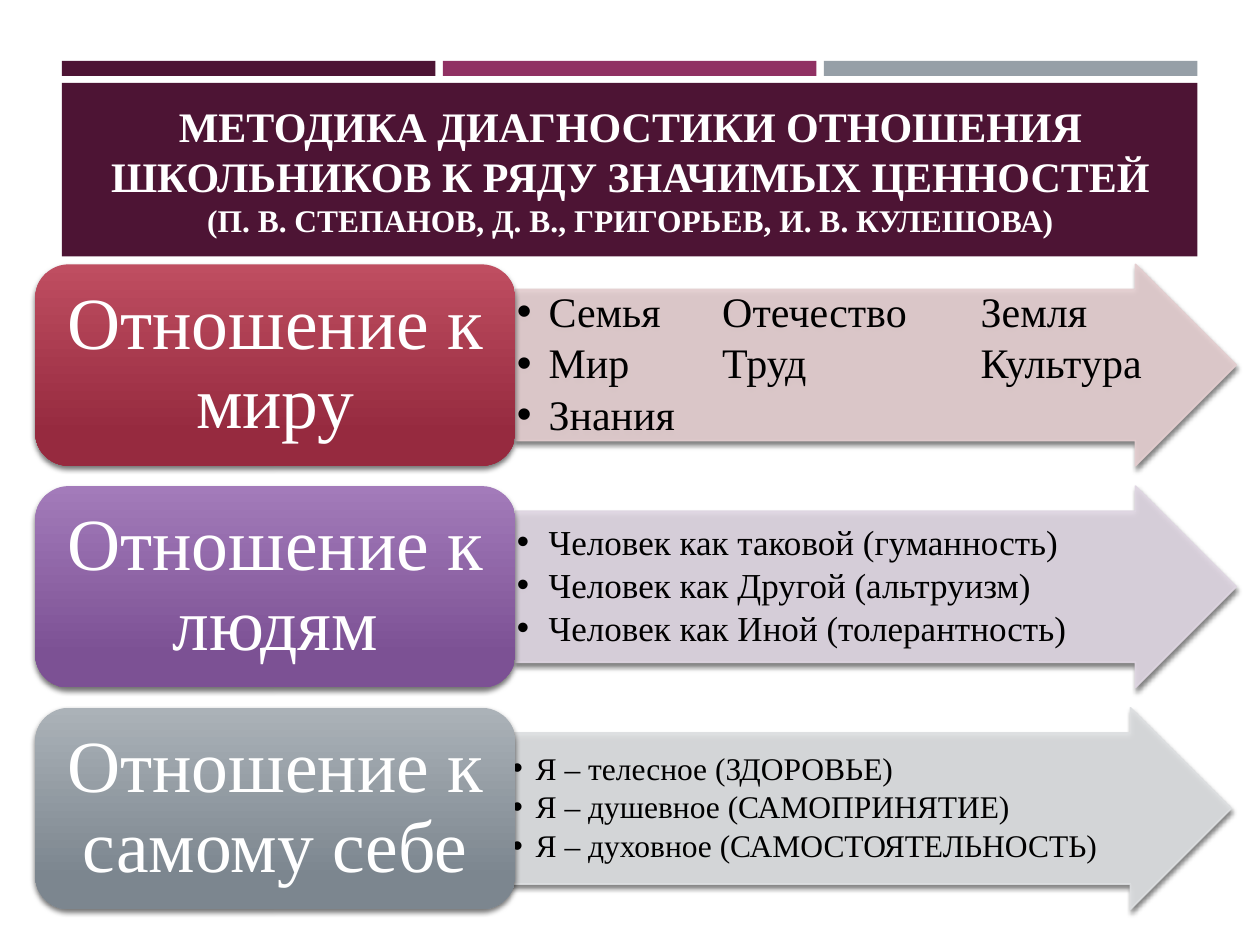
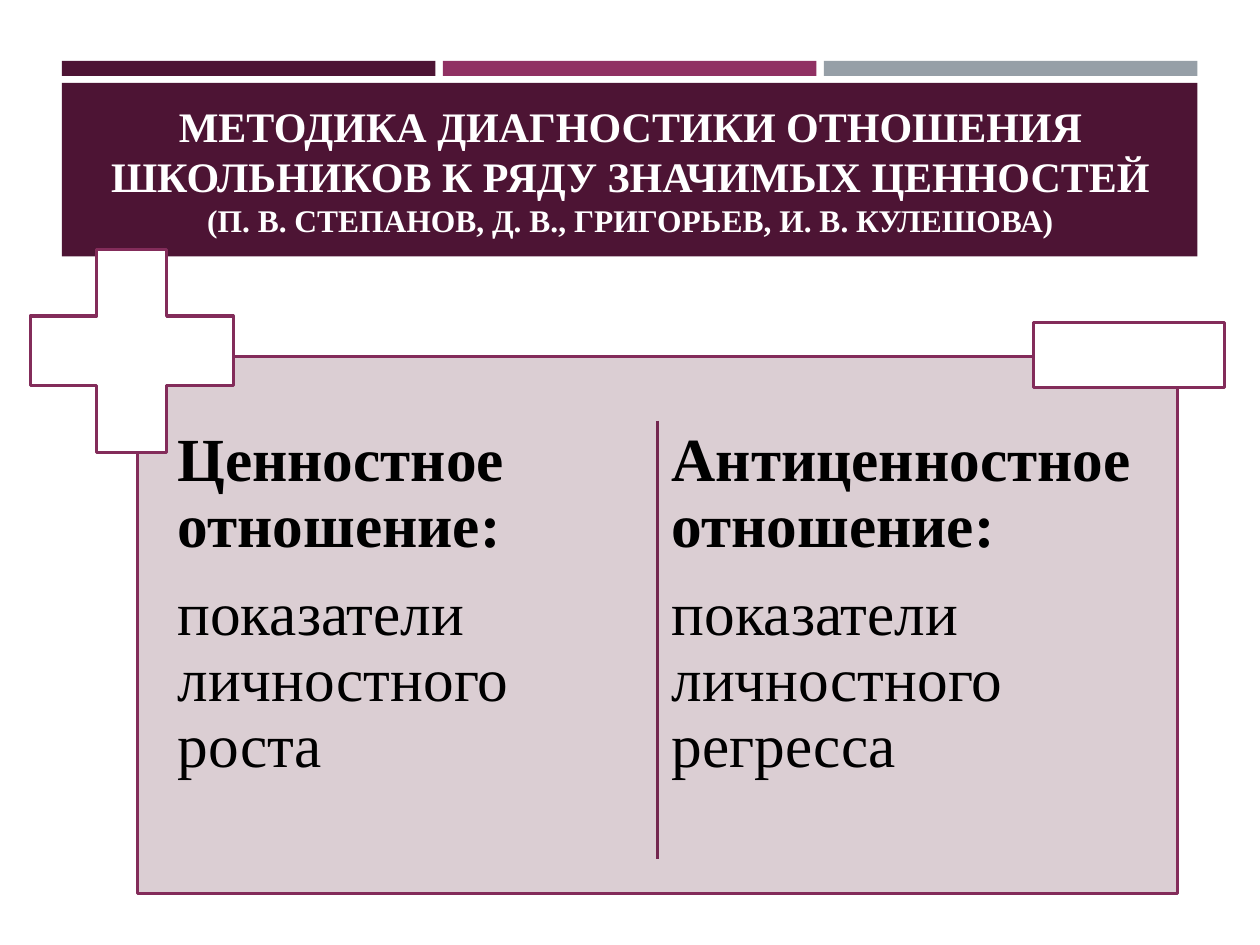
from dataclasses import dataclass
from typing import Optional

from lxml.etree import SubElement
from pptx import Presentation
from pptx.dml.color import RGBColor
from pptx.enum.shapes import MSO_CONNECTOR as Connector, MSO_SHAPE as Preset
from pptx.enum.text import MSO_ANCHOR as Anchor, MSO_AUTO_SIZE as AutoSize, PP_ALIGN as Align
from pptx.oxml.ns import qn
from pptx.util import Cm, Pt

FONT = "Times New Roman"
BULLET_FONT = "Arial"
WHITE = RGBColor(0xFF, 0xFF, 0xFF)
BLACK = RGBColor(0x00, 0x00, 0x00)
PLUM = RGBColor(0x4D, 0x14, 0x34)
MAGENTA = RGBColor(0x90, 0x31, 0x63)
GREY = RGBColor(0x96, 0x9F, 0xA7)
PANEL = RGBColor(0xDB, 0xCE, 0xD3)
OUTLINE = RGBColor(0x83, 0x2C, 0x5A)
DIVIDER = RGBColor(0x73, 0x27, 0x4F)
ROSE_PALE = RGBColor(0xE4, 0xCE, 0xD0)
ROSE_LIGHT = RGBColor(0xBF, 0x4E, 0x61)
ROSE_DARK = RGBColor(0x96, 0x2A, 0x3F)
VIOLET_PALE = RGBColor(0xDF, 0xD6, 0xE2)
VIOLET_LIGHT = RGBColor(0xA3, 0x7B, 0xBA)
VIOLET_DARK = RGBColor(0x7C, 0x51, 0x94)
GREY_PALE = RGBColor(0xDD, 0xDF, 0xE1)
GREY_LIGHT = RGBColor(0xAB, 0xB2, 0xB8)
GREY_DARK = RGBColor(0x7C, 0x86, 0x8F)

BAND_LEFT = 1.25
BAR_STEP = 7.68
ROW_TOP = 5.33
ROW_STEP = 4.47
ROW_HEIGHT = 4.06
COLUMN_STOPS = (4.14, 9.35)
TITLE = "МЕТОДИКА ДИАГНОСТИКИ ОТНОШЕНИЯ ШКОЛЬНИКОВ К РЯДУ ЗНАЧИМЫХ ЦЕННОСТЕЙ"
AUTHORS = "(П. В. СТЕПАНОВ, Д. В., ГРИГОРЬЕВ, И. В. КУЛЕШОВА)"


@dataclass(frozen=True)
class Box:
    left: float
    top: float
    width: float
    height: float

    def lengths(self) -> tuple:
        return Cm(self.left), Cm(self.top), Cm(self.width), Cm(self.height)


@dataclass(frozen=True)
class Attitude:
    heading: str
    values: tuple
    size: int
    indent: float
    arrow_left: float
    pale: RGBColor
    light: RGBColor
    dark: RGBColor


@dataclass(frozen=True)
class Column:
    left: float
    heading: str
    body: str


ATTITUDES = (
    Attitude("Отношение к миру",
             ("Семья\tОтечество\tЗемля", "Мир\tТруд\tКультура", "Знания"),
             24, 0.64, 10.39, ROSE_PALE, ROSE_LIGHT, ROSE_DARK),
    Attitude("Отношение к людям",
             ("Человек как таковой (гуманность)", "Человек как Другой (альтруизм)",
              "Человек как Иной (толерантность)"),
             20, 0.64, 10.39, VIOLET_PALE, VIOLET_LIGHT, VIOLET_DARK),
    Attitude("Отношение к самому себе",
             ("Я – телесное (ЗДОРОВЬЕ)", "Я – душевное (САМОПРИНЯТИЕ)",
              "Я – духовное (САМОСТОЯТЕЛЬНОСТЬ)"),
             18, 0.48, 10.29, GREY_PALE, GREY_LIGHT, GREY_DARK),
)
COLUMNS = (
    Column(3.4, "Ценностное отношение:", "показатели личностного роста"),
    Column(13.36, "Антиценностное отношение:", "показатели личностного регресса"),
)


def add_run(paragraph, text: str, size: float, color: RGBColor, bold: bool = False) -> None:
    run = paragraph.add_run()
    run.text = text
    run.font.name = FONT
    run.font.size = Pt(size)
    run.font.bold = bold
    run.font.color.rgb = color


def next_paragraph(frame, index: int):
    return frame.paragraphs[0] if index == 0 else frame.add_paragraph()


def space(paragraph, after: float) -> None:
    paragraph.line_spacing = 0.9
    paragraph.space_after = Pt(after)


def set_margins(frame, horizontal: float, vertical: float) -> None:
    frame.word_wrap = True
    frame.margin_left = frame.margin_right = Cm(horizontal)
    frame.margin_top = frame.margin_bottom = Cm(vertical)


def add_shape(slide, preset: Preset, box: Box, fill: Optional[RGBColor] = None,
              line: Optional[RGBColor] = None, weight: float = 1.75):
    shape = slide.shapes.add_shape(preset, *box.lengths())
    shape.shadow.inherit = False
    if fill is not None:
        shape.fill.solid()
        shape.fill.fore_color.rgb = fill
    if line is None:
        shape.line.fill.background()
    else:
        shape.line.color.rgb = line
        shape.line.width = Pt(weight)
    return shape


def set_alpha(color, percent: int) -> None:
    SubElement(color, qn("a:alpha"), val=str(percent * 1000))


def add_shadow(shape) -> None:
    effects = shape.element.spPr.find(qn("a:effectLst"))
    shadow = SubElement(effects, qn("a:outerShdw"), blurRad=str(Pt(3)), dist=str(Pt(2)),
                        dir="5400000", rotWithShape="0")
    set_alpha(SubElement(shadow, qn("a:srgbClr"), val=str(BLACK)), 55)


def add_bullet(paragraph, indent: float, stops: tuple) -> None:
    properties = paragraph._p.get_or_add_pPr()
    properties.set("marL", str(Cm(indent)))
    properties.set("indent", str(-Cm(indent)))
    SubElement(properties, qn("a:buFont"), typeface=BULLET_FONT)
    SubElement(properties, qn("a:buChar"), char="•")
    tabs = SubElement(properties, qn("a:tabLst"))
    for stop in stops:
        SubElement(tabs, qn("a:tab"), pos=str(Cm(stop)), algn="l")


def add_titled_slide(presentation):
    slide = presentation.slides.add_slide(presentation.slide_layouts[5])
    for index, color in enumerate((PLUM, MAGENTA, GREY)):
        add_shape(slide, Preset.RECTANGLE,
                  Box(BAND_LEFT + index * BAR_STEP, 1.23, 7.53, 0.3), color)
    add_shape(slide, Preset.RECTANGLE, Box(BAND_LEFT, 1.67, 22.89, 3.5), PLUM)

    title = slide.shapes.title
    title.left, title.top, title.width, title.height = Box(1.61, 1.9, 22.2, 3.04).lengths()
    frame = title.text_frame
    frame.word_wrap = True
    frame.auto_size = AutoSize.NONE
    frame.vertical_anchor = Anchor.MIDDLE
    for index, (text, size) in enumerate(((TITLE, 24), (AUTHORS, 18))):
        paragraph = next_paragraph(frame, index)
        paragraph.alignment = Align.CENTER
        add_run(paragraph, text, size, WHITE, True)
    title.element.getparent().append(title.element)
    return slide


def add_arrow(slide, attitude: Attitude, top: float) -> None:
    arrow = add_shape(slide, Preset.RIGHT_ARROW,
                      Box(attitude.arrow_left, top, 14.53, ROW_HEIGHT),
                      attitude.pale, attitude.pale, 1)
    arrow.adjustments[0], arrow.adjustments[1] = 0.75, 0.5
    for color in arrow.element.spPr.iter(qn("a:srgbClr")):
        set_alpha(color, 90)
    add_shadow(arrow)
    frame = arrow.text_frame
    set_margins(frame, 0.03, 0.03)
    frame.vertical_anchor = Anchor.MIDDLE
    for index, value in enumerate(attitude.values):
        paragraph = next_paragraph(frame, index)
        paragraph.alignment = Align.LEFT
        space(paragraph, attitude.size * 0.15)
        add_bullet(paragraph, attitude.indent, COLUMN_STOPS if "\t" in value else ())
        add_run(paragraph, value, attitude.size, BLACK)


def add_heading_box(slide, attitude: Attitude, top: float) -> None:
    box = add_shape(slide, Preset.ROUNDED_RECTANGLE, Box(0.71, top, 9.68, ROW_HEIGHT))
    box.fill.gradient()
    box.fill.gradient_angle = 270
    stops = ((0, attitude.light), (0.84, attitude.dark))
    for stop, (position, color) in zip(box.fill.gradient_stops, stops):
        stop.position = position
        stop.color.rgb = color
    add_shadow(box)
    frame = box.text_frame
    set_margins(frame, 0.43, 0.23)
    frame.vertical_anchor = Anchor.MIDDLE
    paragraph = frame.paragraphs[0]
    paragraph.alignment = Align.CENTER
    space(paragraph, 14.7)
    add_run(paragraph, attitude.heading, 42, WHITE)


def add_column(slide, column: Column) -> None:
    frame = slide.shapes.add_textbox(*Box(column.left, 8.46, 9.73, 9.27).lengths()).text_frame
    set_margins(frame, 0.18, 0.18)
    for index, (text, bold) in enumerate(((column.heading, True), (column.body, False))):
        paragraph = next_paragraph(frame, index)
        space(paragraph, 12.25)
        add_run(paragraph, text, 35, BLACK, bold)


def build_attitudes(presentation) -> None:
    slide = add_titled_slide(presentation)
    for index, attitude in enumerate(ATTITUDES):
        top = ROW_TOP + index * ROW_STEP
        add_arrow(slide, attitude, top)
        add_heading_box(slide, attitude, top)


def build_comparison(presentation) -> None:
    slide = add_titled_slide(presentation)
    add_shape(slide, Preset.RECTANGLE, Box(2.77, 7.19, 20.96, 10.82), PANEL, OUTLINE)
    for column in COLUMNS:
        add_column(slide, column)
    plus = add_shape(slide, Preset.CROSS, Box(0.61, 5.03, 4.09, 4.09), WHITE, OUTLINE)
    plus.adjustments[0] = 0.328
    add_shape(slide, Preset.RECTANGLE, Box(20.83, 6.5, 3.86, 1.32), WHITE, OUTLINE)
    divider = slide.shapes.add_connector(Connector.STRAIGHT, Cm(13.26), Cm(8.48),
                                         Cm(13.26), Cm(17.32))
    divider.line.color.rgb = DIVIDER
    divider.line.width = Pt(1.75)
    SubElement(divider.element.spPr, qn("a:effectLst"))


def main() -> None:
    presentation = Presentation()
    presentation.slide_width, presentation.slide_height = Cm(25.4), Cm(19.05)
    build_attitudes(presentation)
    build_comparison(presentation)
    presentation.save("out.pptx")


if __name__ == "__main__":
    main()
